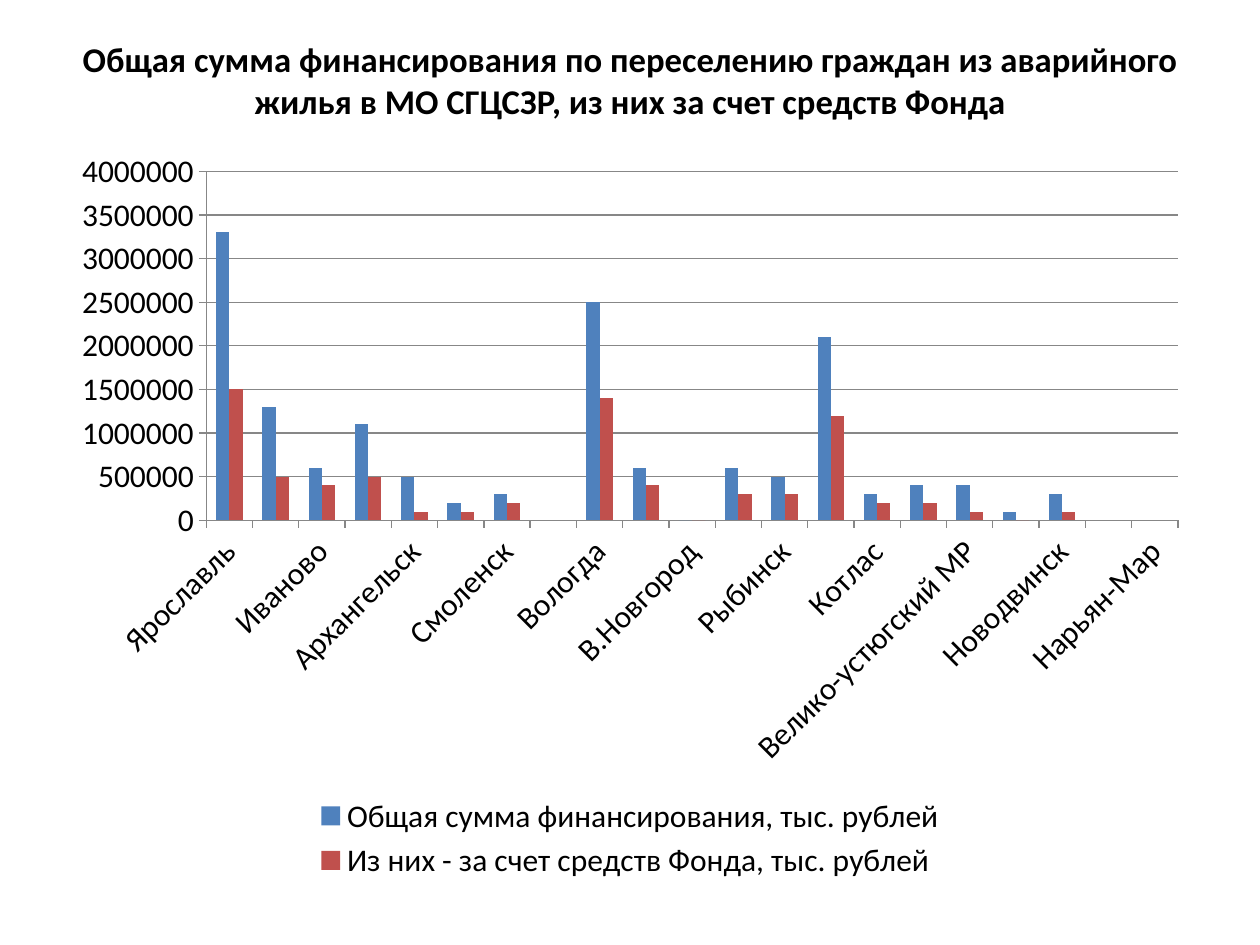
from pptx import Presentation
from pptx.chart.data import CategoryChartData
from pptx.dml.color import RGBColor
from pptx.enum.chart import XL_CHART_TYPE, XL_LEGEND_POSITION, XL_TICK_MARK
from pptx.enum.text import MSO_ANCHOR, PP_ALIGN
from pptx.util import Inches, Pt

FONT = "Calibri"
COLORS = {"text": "000000", "total": "4F81BD", "fund": "C0504D", "grid": "878787"}
TITLE = ("Общая сумма финансирования по переселению граждан из аварийного "
         "жилья в МО СГЦСЗР, из них за счет средств Фонда")
FUNDING = [
    ("Ярославль", 3300000, 1500000),
    ("Калининград", 1300000, 500000),
    ("Иваново", 600000, 400000),
    ("Тверь", 1100000, 500000),
    ("Архангельск", 500000, 100000),
    ("Владимир", 200000, 100000),
    ("Смоленск", 300000, 200000),
    ("Череповец", None, None),
    ("Вологда", 2500000, 1400000),
    ("Кострома", 600000, 400000),
    ("В.Новгород", 0, 0),
    ("Псков", 600000, 300000),
    ("Рыбинск", 500000, 300000),
    ("Северодвинск", 2100000, 1200000),
    ("Котлас", 300000, 200000),
    ("Тихвинский МР", 400000, 200000),
    ("Велико-устюгский МР", 400000, 100000),
    ("Старая Русса", 100000, 0),
    ("Новодвинск", 300000, 100000),
    ("Коряжма", None, None),
    ("Нарьян-Мар", None, None),
]


def rgb(name):
    return RGBColor.from_string(COLORS[name])


def format_font(font, size, color="text", bold=False):
    font.name = FONT
    font.size = Pt(size)
    font.bold = bold
    font.color.rgb = rgb(color)


def add_text(slide, text, left, top, width, height, align=PP_ALIGN.CENTER, **style):
    box = slide.shapes.add_textbox(Inches(left), Inches(top), Inches(width), Inches(height))
    frame = box.text_frame
    frame.word_wrap = True
    frame.vertical_anchor = MSO_ANCHOR.TOP
    frame.margin_top = 0
    paragraph = frame.paragraphs[0]
    paragraph.alignment = align
    run = paragraph.add_run()
    run.text = text
    format_font(run.font, **style)


def style_axis(axis):
    axis.major_tick_mark = XL_TICK_MARK.OUTSIDE
    axis.minor_tick_mark = XL_TICK_MARK.NONE
    axis.format.line.color.rgb = rgb("grid")
    axis.format.line.width = Pt(0.75)


def add_funding_chart(slide, left, top, width, height):
    cities, totals, fund_shares = zip(*FUNDING)
    data = CategoryChartData(number_format="General")
    data.categories = cities
    data.add_series("Общая сумма финансирования, тыс. рублей", totals)
    data.add_series("Из них - за счет средств Фонда, тыс. рублей", fund_shares)
    chart = slide.shapes.add_chart(
        XL_CHART_TYPE.COLUMN_CLUSTERED,
        Inches(left), Inches(top), Inches(width), Inches(height), data,
    ).chart
    chart.has_title = False
    format_font(chart.font, 18)

    plot = chart.plots[0]
    plot.gap_width = 150
    plot.overlap = 0
    plot.vary_by_categories = False
    for series, color in zip(plot.series, ("total", "fund")):
        series.format.fill.solid()
        series.format.fill.fore_color.rgb = rgb(color)

    amounts = chart.value_axis
    for axis in (chart.category_axis, amounts):
        style_axis(axis)
    amounts.minimum_scale = 0
    amounts.maximum_scale = 4000000
    amounts.major_unit = 500000
    amounts.has_major_gridlines = True
    amounts.major_gridlines.format.line.color.rgb = rgb("grid")
    amounts.major_gridlines.format.line.width = Pt(0.75)

    chart.has_legend = True
    chart.legend.position = XL_LEGEND_POSITION.BOTTOM
    chart.legend.include_in_layout = False


def main():
    deck = Presentation()
    deck.slide_width, deck.slide_height = Inches(10), Inches(7.5)
    slide = deck.slides.add_slide(deck.slide_layouts[6])
    add_text(slide, TITLE, 0.5, 0.3, 9, 1.25, size=19.8, bold=True)
    add_funding_chart(slide, 0.47, 1.09, 9.06, 5.94)
    deck.save("out.pptx")


if __name__ == "__main__":
    main()
